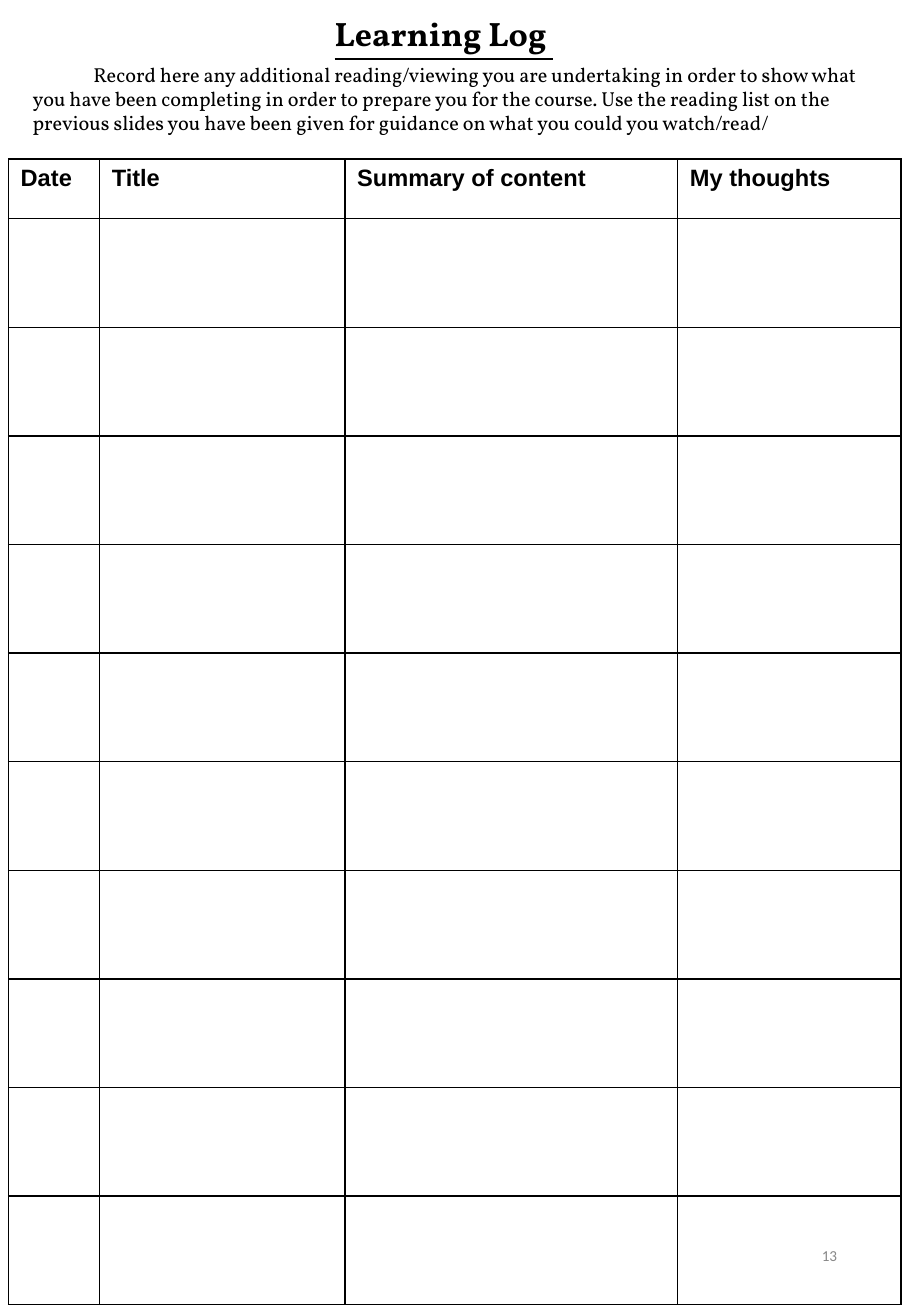
from lxml import etree
from pptx import Presentation
from pptx.dml.color import RGBColor
from pptx.enum.text import MSO_ANCHOR, PP_ALIGN
from pptx.oxml.ns import qn
from pptx.util import Inches, Pt

MIDDLE = MSO_ANCHOR.MIDDLE
CENTER, RIGHT = PP_ALIGN.CENTER, PP_ALIGN.RIGHT

COLORS = {"ink": "000000", "paper": "FFFFFF", "number": "888888"}
TITLE = "Learning Log "
INTRO = (
    "Record here any additional reading/viewing you are undertaking in order "
    "to show what you have been completing in order to prepare you for the "
    "course. Use the reading list on the previous slides you have been given "
    "for guidance on what you could you watch/read/"
)
PAGE_NUMBER = "13"
COLUMNS = [("Date", 0.75), ("Title", 2.02),
           ("Summary of content", 2.74), ("My thoughts", 1.84)]
TABLE_LEFT, TABLE_TOP, TABLE_BOTTOM = 0.07, 1.31, 10.74
HEADER_HEIGHT, ENTRY_COUNT = 0.49, 10


def add_run(p, text, font, size, color, bold=False, underline=False):
    r = p.add_run()
    r.text = text
    r.font.name = font
    r.font.size = Pt(size)
    r.font.bold = bold
    r.font.underline = underline
    r.font.color.rgb = RGBColor.from_string(COLORS[color])


def add_text_frame(s, left, top, width, height):
    sp = s.shapes.add_textbox(Inches(left), Inches(top), Inches(width), Inches(height))
    tf = sp.text_frame
    tf.word_wrap = True
    tf.vertical_anchor = MIDDLE
    return tf


def add_borders(cell):
    tcPr = cell._tc.get_or_add_tcPr()
    for i, side in enumerate(("lnL", "lnR", "lnT", "lnB")):
        ln = etree.Element(qn(f"a:{side}"), w=str(Pt(1)))
        fill = etree.SubElement(ln, qn("a:solidFill"))
        etree.SubElement(fill, qn("a:srgbClr"), val=COLORS["ink"])
        tcPr.insert(i, ln)


def add_log_table(s):
    height = TABLE_BOTTOM - TABLE_TOP
    entry_height = (height - HEADER_HEIGHT) / ENTRY_COUNT
    row_heights = [HEADER_HEIGHT] + [entry_height] * ENTRY_COUNT
    width = sum(w for _, w in COLUMNS)
    table = s.shapes.add_table(len(row_heights), len(COLUMNS),
                               Inches(TABLE_LEFT), Inches(TABLE_TOP),
                               Inches(width), Inches(height)).table
    for row, row_height in zip(table.rows, row_heights):
        row.height = Inches(row_height)
    for i, (label, col_width) in enumerate(COLUMNS):
        table.columns[i].width = Inches(col_width)
        add_run(table.cell(0, i).text_frame.paragraphs[0], label, "Arial", 14, "ink", bold=True)
    for cell in table.iter_cells():
        cell.fill.solid()
        cell.fill.fore_color.rgb = RGBColor.from_string(COLORS["paper"])
        add_borders(cell)


def main():
    prs = Presentation()
    prs.slide_width, prs.slide_height = Inches(7.5), Inches(10.83)
    s = prs.slides.add_slide(prs.slide_layouts[6])

    tf = add_text_frame(s, 0.17, 0.09, 7.17, 1.04)
    p = tf.paragraphs[0]
    p.alignment = CENTER
    add_run(p, TITLE, "Vollkorn", 20, "ink", bold=True, underline=True)
    add_run(p, "\t", "Vollkorn", 20, "ink")
    p = tf.add_paragraph()
    p.space_before = Pt(5)
    pPr = p._p.get_or_add_pPr()
    pPr.set("marL", "0")
    pPr.set("indent", str(Inches(0.5)))
    add_run(p, INTRO, "Vollkorn", 12, "ink")

    add_log_table(s)

    p = add_text_frame(s, 5.3, 10.04, 1.69, 0.58).paragraphs[0]
    p.alignment = RIGHT
    add_run(p, PAGE_NUMBER, "Calibri", 9, "number")

    prs.save("out.pptx")


if __name__ == "__main__":
    main()
